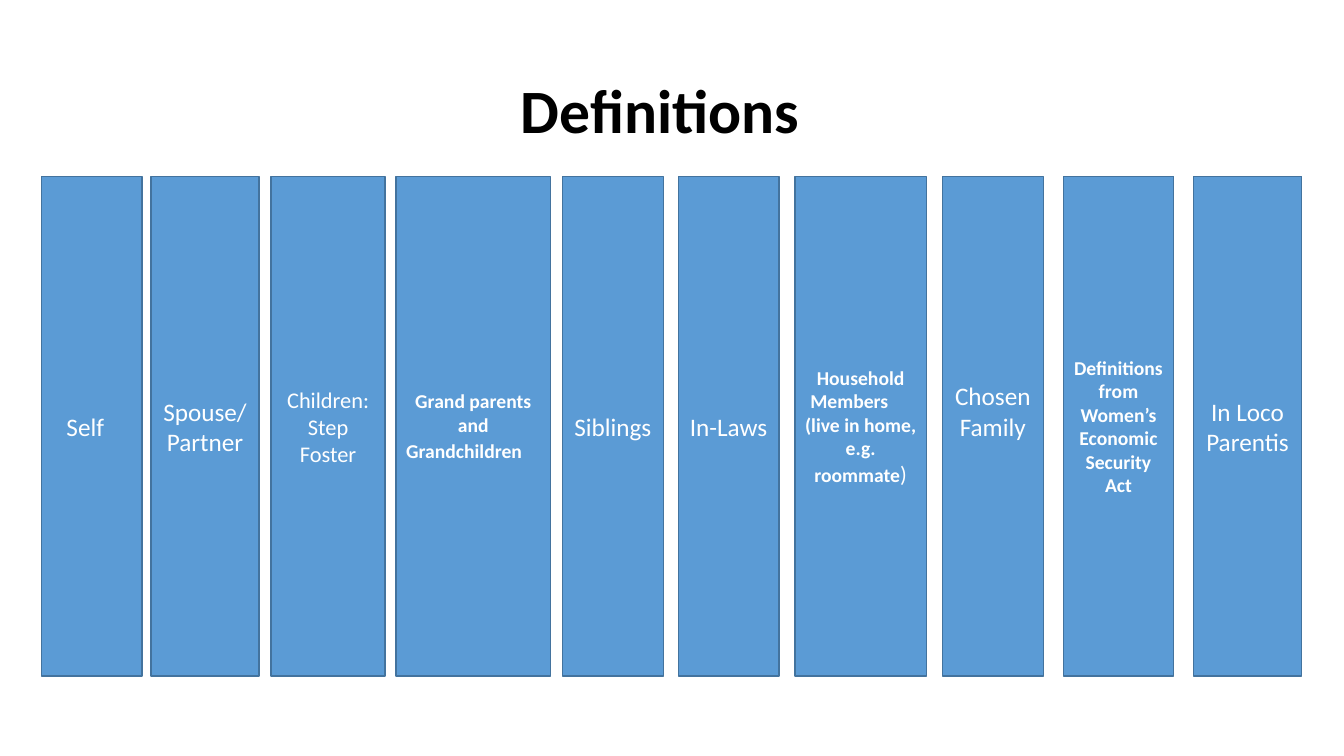
from dataclasses import dataclass

from pptx import Presentation
from pptx.dml.color import RGBColor
from pptx.enum.shapes import MSO_SHAPE
from pptx.enum.text import MSO_ANCHOR, PP_ALIGN
from pptx.slide import Slide
from pptx.text.text import TextFrame, _Paragraph
from pptx.util import Pt

COLORS = {"column": "5B9BD5", "border": "43739E", "label": "FFFFFF", "title": "000000"}
FONT = "Calibri"
COLUMN_TOP, COLUMN_HEIGHT = 126, 357
INSET = 3.6


@dataclass(frozen=True)
class Definition:
    left: float
    width: float
    lines: tuple[str, ...]
    size: int = 18
    bold: bool = False
    tail: str = ""  # closing characters set regular at 16 pt
    lift: float = 0  # extra space kept below the label


DEFINITIONS = [
    Definition(29.5, 72, ("Self\t",)),
    Definition(108, 77, ("Spouse/Partner",)),
    Definition(193.7, 81.4, ("Children:", "Step", "Foster"), size=16),
    Definition(283, 110.2, ("Grand parents and Grandchildren",), 14, True, tail="\t"),
    Definition(401.8, 72, ("Siblings",)),
    Definition(484.5, 72, ("In-Laws",)),
    Definition(568, 93.6, ("Household Members\t", "(live in home, e.g. roommate"), 14, True, tail=")"),
    Definition(673.2, 72, ("Chosen Family",), lift=22),
    Definition(759.6, 78.7, ("Definitions from Women’s Economic Security Act",), 14, True),
    Definition(852.5, 77.2, ("In Loco Parentis",)),
]


def rgb(name: str) -> RGBColor:
    return RGBColor.from_string(COLORS[name])


def style_paragraph(paragraph: _Paragraph, size: float, bold: bool, color: str) -> None:
    paragraph.alignment = PP_ALIGN.CENTER
    paragraph.font.name = FONT
    paragraph.font.size = Pt(size)
    paragraph.font.bold = bold
    paragraph.font.color.rgb = rgb(color)


def prepare_frame(frame: TextFrame) -> None:
    frame.word_wrap = True
    frame.vertical_anchor = MSO_ANCHOR.MIDDLE


def add_title(slide: Slide, text: str) -> None:
    title = slide.shapes.add_textbox(Pt(66), Pt(28.8), Pt(828), Pt(104.4))
    prepare_frame(title.text_frame)
    heading = title.text_frame.paragraphs[0]
    heading.text = text
    heading.line_spacing = 0.9
    style_paragraph(heading, 44, True, "title")


def add_definition(slide: Slide, definition: Definition) -> None:
    column = slide.shapes.add_shape(
        MSO_SHAPE.FLOWCHART_PROCESS,
        Pt(definition.left), Pt(COLUMN_TOP), Pt(definition.width), Pt(COLUMN_HEIGHT),
    )
    column.shadow.inherit = False
    column.fill.solid()
    column.fill.fore_color.rgb = rgb("column")
    column.line.color.rgb = rgb("border")
    column.line.width = Pt(1)

    label = column.text_frame
    prepare_frame(label)
    label.margin_bottom = Pt(INSET + definition.lift)
    for index, line in enumerate(definition.lines):
        paragraph = label.add_paragraph() if index else label.paragraphs[0]
        paragraph.add_run().text = line
        style_paragraph(paragraph, definition.size, definition.bold, "label")

    if definition.tail:
        tail = label.paragraphs[-1].add_run()
        tail.text = definition.tail
        tail.font.size = Pt(16)
        tail.font.bold = False


def main() -> None:
    presentation = Presentation()
    presentation.slide_width, presentation.slide_height = Pt(960), Pt(540)
    slide = presentation.slides.add_slide(presentation.slide_layouts[6])

    # Heading
    add_title(slide, "Definitions\t")

    # Columns, left to right
    for definition in DEFINITIONS:
        add_definition(slide, definition)

    presentation.save("out.pptx")


if __name__ == "__main__":
    main()
